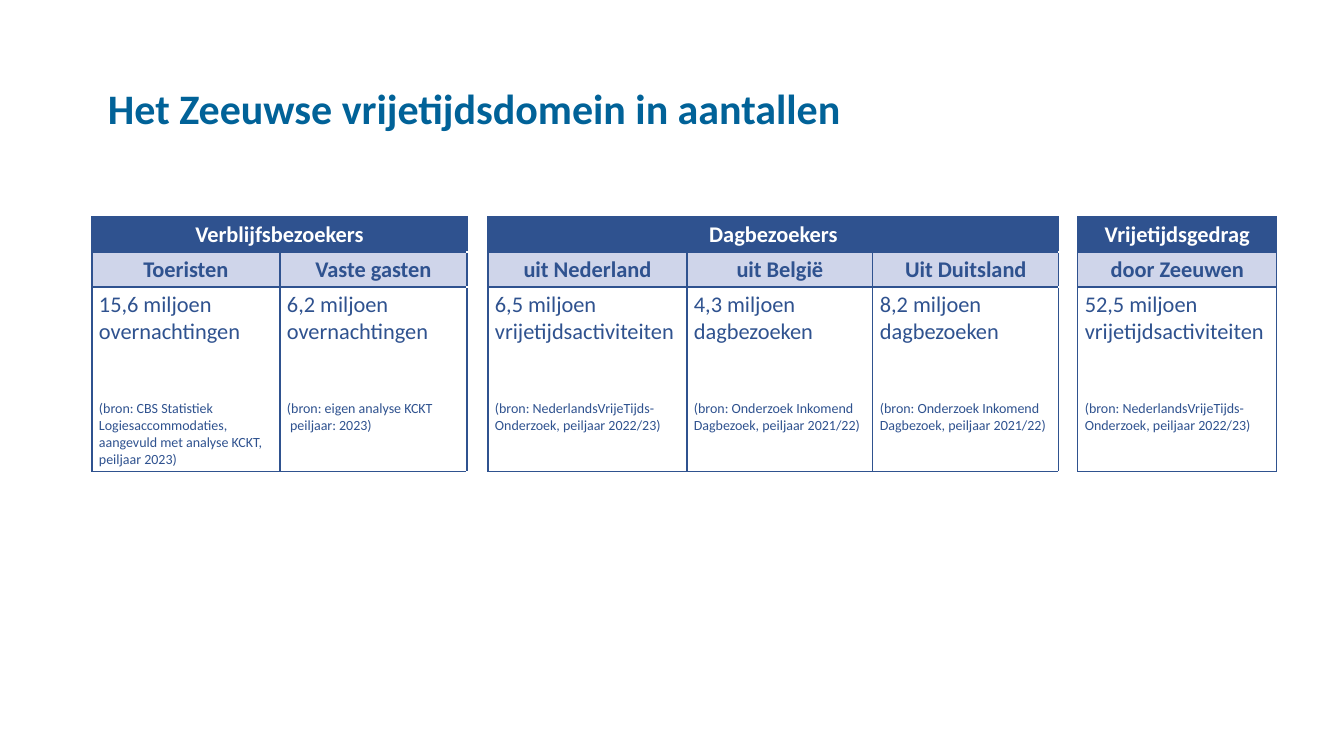
from pptx import Presentation
from pptx.dml.color import RGBColor
from pptx.enum import text
from pptx.oxml import parse_xml
from pptx.oxml import ns
from pptx import util as u

SCALE = 914400 / 100.8
NAVY, PALE, WHITE, TITLE = "2F528F", "CFD5EA", "FFFFFF", "016298"
GAPS = (2, 6)
WIDTHS = (188, 187, 21, 199, 186, 186, 19, 199)
ROWS = (35, 35, 185)
GROUPS = (
    (0, 1, "Verblijfsbezoekers"),
    (3, 5, "Dagbezoekers"),
    (7, 7, "Vrijetijdsgedrag"),
)
NVTO = "(bron: NederlandsVrijeTijds-Onderzoek, peiljaar 2022/23)"
INKOMEND = "(bron: Onderzoek Inkomend Dagbezoek, peiljaar 2021/22)"
VISITORS = {
    0: ("Toeristen", "15,6 miljoen overnachtingen",
        "(bron: CBS Statistiek Logiesaccommodaties, aangevuld met analyse KCKT, peiljaar 2023)"),
    1: ("Vaste gasten", "6,2 miljoen overnachtingen",
        "(bron: eigen analyse KCKT\v peiljaar: 2023)"),
    3: ("uit Nederland", "6,5 miljoen vrijetijdsactiviteiten", NVTO),
    4: ("uit België", "4,3 miljoen dagbezoeken", INKOMEND),
    5: ("Uit Duitsland", "8,2 miljoen dagbezoeken", INKOMEND),
    7: ("door Zeeuwen", "52,5 miljoen vrijetijdsactiviteiten", NVTO),
}


def px(n):
    """Turn a length in px into EMU."""
    return u.Emu(round(n * SCALE))


def rgb(value):
    """Turn a hex string into a colour."""
    return RGBColor.from_string(value)


def write(p, words, size, color, bold=False, **layout):
    """Write words into a paragraph with the given font and layout."""
    p.text = words
    for name, value in layout.items():
        setattr(p, name, value)
    for r in p.runs:
        for name, value in dict(name="Calibri", size=u.Pt(size), bold=bold).items():
            setattr(r.font, name, value)
        r.font.color.rgb = rgb(color)


def style_cell(cell, sides, fill=None):
    """Give a cell its margins, border lines and fill."""
    edge = 4 if len(sides) == 4 else 0
    margins = dict(margin_left=7, margin_right=7, margin_top=edge, margin_bottom=edge)
    for name, value in margins.items():
        setattr(cell, name, px(value))
    tcPr = cell._tc.get_or_add_tcPr()
    for side in sides:
        tcPr.append(parse_xml(
            f'<a:ln{side} {ns.nsdecls("a")} w="12700"><a:solidFill>'
            f'<a:srgbClr val="{NAVY}"/></a:solidFill></a:ln{side}>'))
    if fill:
        cell.fill.solid()
        cell.fill.fore_color.rgb = rgb(fill)
    else:
        cell.fill.background()


def add_title(s, x, y, w, h):
    """Place the slide title in its box."""
    tf = s.shapes.add_textbox(px(x), px(y), px(w), px(h)).text_frame
    margins = dict(margin_left=px(10), margin_right=px(10), margin_top=px(4), margin_bottom=px(4))
    for name, value in dict(margins, word_wrap=True, vertical_anchor=text.MSO_ANCHOR.MIDDLE).items():
        setattr(tf, name, value)
    write(tf.paragraphs[0], "Het Zeeuwse vrijetijdsdomein in aantallen", 30, TITLE, True,
          line_spacing=0.9)


def add_visitor_table(s, x, y):
    """Place the table of visitor groups with its top left corner at x, y."""
    frame = s.shapes.add_table(len(ROWS), len(WIDTHS), px(x), px(y),
                               px(sum(WIDTHS)), px(sum(ROWS)))
    table = frame.table
    table.first_row = table.horz_banding = False
    for column, width in zip(table.columns, WIDTHS):
        column.width = px(width)
    for row, height, fill in zip(table.rows, ROWS, (NAVY, PALE, None)):
        row.height = px(height)
        for i, cell in enumerate(row.cells):
            if i in GAPS:
                style_cell(cell, "LR")
            else:
                style_cell(cell, "LRTB", fill)

    center = text.PP_ALIGN.CENTER
    for first, last, heading in GROUPS:
        if last > first:
            table.cell(0, first).merge(table.cell(0, last))
        write(table.cell(0, first).text_frame.paragraphs[0], heading, 16, WHITE, True,
              alignment=center)
    for i, (heading, count, source) in VISITORS.items():
        write(table.cell(1, i).text_frame.paragraphs[0], heading, 16, NAVY, True,
              alignment=center)
        tf = table.cell(2, i).text_frame
        write(tf.paragraphs[0], count, 16, NAVY)
        write(tf.add_paragraph(), source, 10, NAVY, space_before=u.Pt(39))


def main():
    """Build the slide and save it."""
    prs = Presentation()
    prs.slide_width, prs.slide_height = px(1344), px(756)
    s = prs.slides.add_slide(prs.slide_layouts[6])
    add_title(s, 98, 86, 1165, 50)
    add_visitor_table(s, 92, 217)
    prs.save("out.pptx")


if __name__ == "__main__":
    main()
